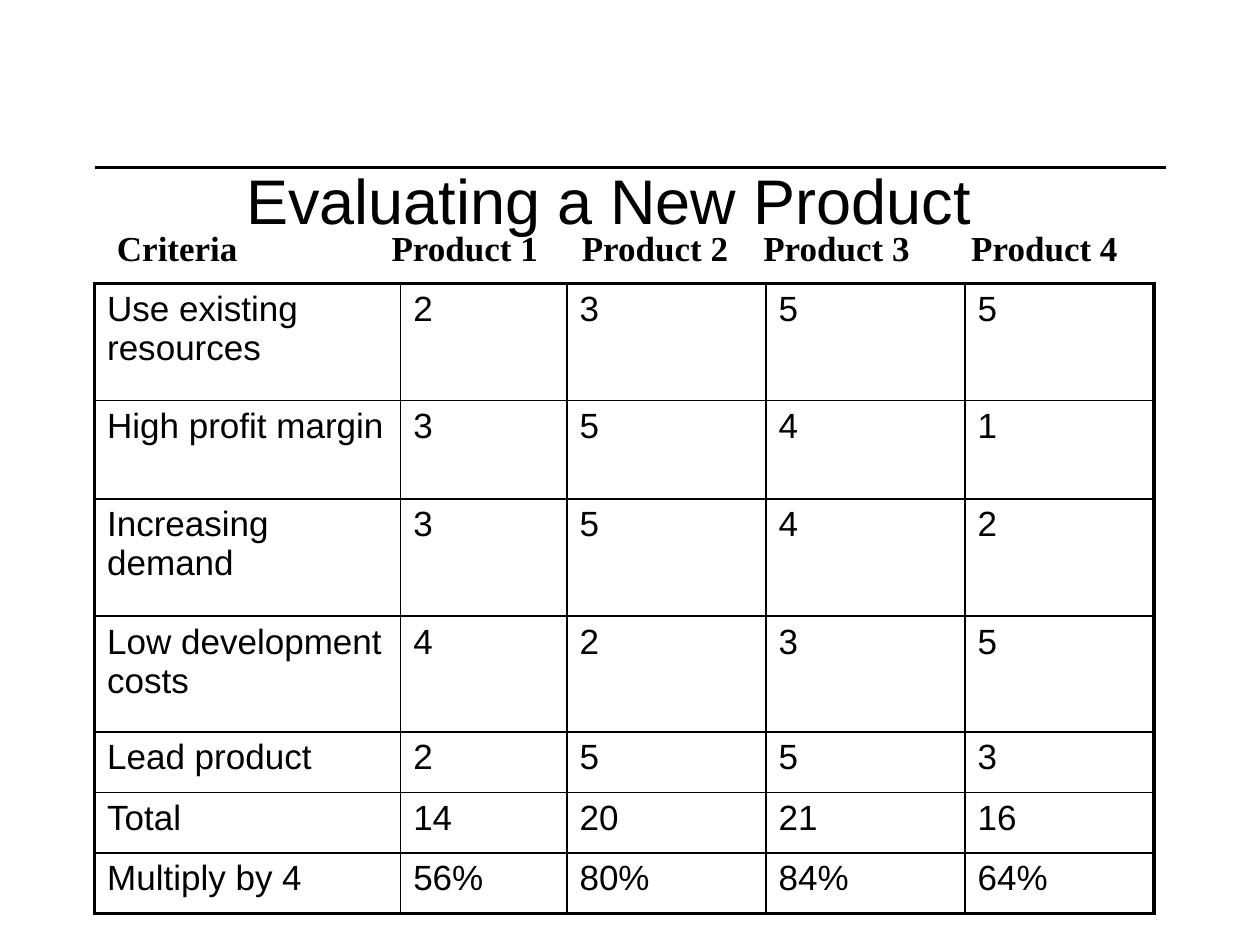
from lxml import etree
from pptx import Presentation
from pptx.dml.color import RGBColor
from pptx.enum.shapes import MSO_CONNECTOR
from pptx.enum.text import MSO_ANCHOR, PP_ALIGN
from pptx.oxml.ns import qn
from pptx.util import Inches, Pt

STRAIGHT = MSO_CONNECTOR.STRAIGHT
MIDDLE = MSO_ANCHOR.MIDDLE
CENTER = PP_ALIGN.CENTER

INK = "000000"
INNER, OUTER = 1, 2.25  # border widths in points
LEFT = 0.75

criteria_widths = [2.43, 1.32, 1.58, 1.58, 1.5]
row_heights = [0.93, 0.78, 0.93, 0.92, 0.48, 0.48, 0.48]
headings = ["Criteria", "Product 1", "Product 2", "Product 3", "Product 4"]
heading_tabs = [2.18, 3.69, 5.13, 6.78]
scores = [
    ["Use existing resources", "2", "3", "5", "5"],
    ["High profit margin", "3", "5", "4", "1"],
    ["Increasing demand", "3", "5", "4", "2"],
    ["Low development costs", "4", "2", "3", "5"],
    ["Lead product", "2", "5", "5", "3"],
    ["Total", "14", "20", "21", "16"],
    ["Multiply by 4", "56%", "80%", "84%", "64%"],
]


def color(hex_value):
    return RGBColor.from_string(hex_value)


def add_run(paragraph, text, size, font="Arial", bold=False):
    run = paragraph.add_run()
    run.text = text
    run.font.size = Pt(size)
    run.font.name = font
    run.font.bold = bold
    run.font.color.rgb = color(INK)


prs = Presentation()
prs.slide_width, prs.slide_height = Inches(10), Inches(7.5)
slide = prs.slides.add_slide(prs.slide_layouts[6])

# Rule above the title
rule = slide.shapes.add_connector(
    STRAIGHT, Inches(LEFT), Inches(1.33), Inches(10 - LEFT), Inches(1.33))
rule.line.color.rgb = color(INK)
rule.line.width = Pt(1.75)
etree.SubElement(rule._element.spPr, qn("a:effectLst"))

# Title
title = slide.shapes.add_textbox(
    Inches(1.08), Inches(1.25), Inches(7.5), Inches(0.67)).text_frame
title.word_wrap = True
title.vertical_anchor = MIDDLE
title.paragraphs[0].alignment = CENTER
add_run(title.paragraphs[0], "Evaluating a New Product", 36)

# Score table: thin inner borders, thick outer frame
table = slide.shapes.add_table(
    len(scores), len(headings), Inches(LEFT), Inches(2.25),
    Inches(sum(criteria_widths)), Inches(sum(row_heights))).table
table.first_row = table.horz_banding = False
for column, width in zip(table.columns, criteria_widths):
    column.width = Inches(width)
for row, height in zip(table.rows, row_heights):
    row.height = Inches(height)

last_row, last_col = len(scores) - 1, len(headings) - 1
for r, row_scores in enumerate(scores):
    for c, score in enumerate(row_scores):
        cell = table.cell(r, c)
        cell.fill.background()
        add_run(cell.text_frame.paragraphs[0], score, 20)
        on_frame = {"a:lnL": c == 0, "a:lnR": c == last_col,
                    "a:lnT": r == 0, "a:lnB": r == last_row}
        cell_props = cell._tc.get_or_add_tcPr()
        for position, (side, outer) in enumerate(on_frame.items()):
            border = etree.Element(qn(side), w=str(Pt(OUTER if outer else INNER)))
            fill = etree.SubElement(border, qn("a:solidFill"))
            etree.SubElement(fill, qn("a:srgbClr"), val=INK)
            cell_props.insert(position, border)

# Column headings, set on tab stops
heading_box = slide.shapes.add_textbox(
    Inches(0.83), Inches(1.75), Inches(8.3), Inches(0.43)).text_frame
heading_box.word_wrap = True
heading_line = heading_box.paragraphs[0]
tab_list = etree.SubElement(heading_line._p.get_or_add_pPr(), qn("a:tabLst"))
for stop in heading_tabs:
    etree.SubElement(tab_list, qn("a:tab"), pos=str(Inches(stop)), algn="l")
add_run(heading_line, "\t".join(headings), 20, "Times New Roman", True)

prs.save("out.pptx")
